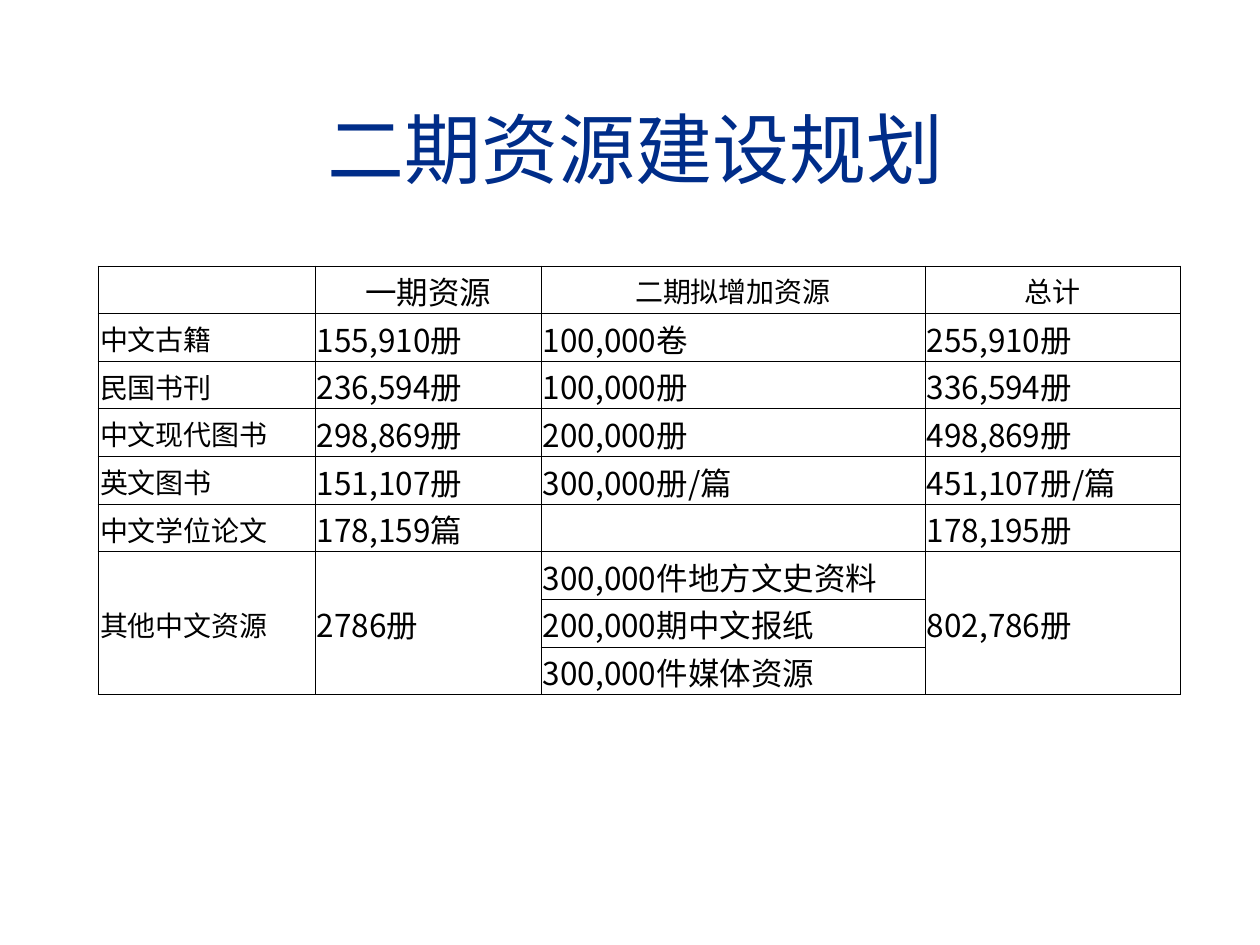
from lxml.etree import SubElement as Sub
from pptx import Presentation
from pptx.dml.color import RGBColor as RGB
from pptx.enum.text import MSO_ANCHOR as Anchor, PP_ALIGN as Align
from pptx.oxml.ns import qn
from pptx.util import Pt

PX = 914400 // 126  # EMU in one px
THEME = dict(ink=RGB(0, 0, 0), head=RGB(0, 0x2D, 0x89), line="000000",
             face="Noto Sans CJK SC", title="Arial",
             big=Pt(44), body=Pt(18), label=Pt(16), rule=Pt(0.5))

COLS = [217, 226, 384, 256]
ROWS = [40] + [45] * 8
DATA = [
    ["", "一期资源", "二期拟增加资源", "总计"],
    ["中文古籍", "155,910册", "100,000卷", "255,910册"],
    ["民国书刊", "236,594册", "100,000册", "336,594册"],
    ["中文现代图书", "298,869册", "200,000册", "498,869册"],
    ["英文图书", "151,107册", "300,000册/篇", "451,107册/篇"],
    ["中文学位论文", "178,159篇", "", "178,195册"],
    ["其他中文资源", "2786册", "300,000件地方文史资料", "802,786册"],
    ["", "", "200,000期中文报纸", ""],
    ["", "", "300,000件媒体资源", ""],
]


def write(frame, text, face, size, color, align):
    para = frame.paragraphs[0]
    para.alignment = align
    font = para.font
    font.name, font.size, font.color.rgb = face, size, color
    if text:
        para.add_run().text = text


def frame_cell(cell):
    props = cell._tc.get_or_add_tcPr()
    for side in ("a:lnL", "a:lnR", "a:lnT", "a:lnB"):
        edge = Sub(props, qn(side), w=str(THEME["rule"]))
        Sub(Sub(edge, qn("a:solidFill")), qn("a:srgbClr"), val=THEME["line"])
    cell.fill.background()


deck = Presentation()
deck.slide_width, deck.slide_height = 1260 * PX, 945 * PX
slide = deck.slides.add_slide(deck.slide_layouts[6])

# Table grid
table = slide.shapes.add_table(
    len(ROWS), len(COLS), 98 * PX, 266 * PX, sum(COLS) * PX, sum(ROWS) * PX).table
table.first_row = table.horz_banding = False
for col, width in zip(table.columns, COLS):
    col.width = width * PX
for row, height in zip(table.rows, ROWS):
    row.height = height * PX

# Cells: headings centred, labels smaller, first-phase counts justified
for r, line in enumerate(DATA):
    for c, text in enumerate(line):
        cell = table.cell(r, c)
        cell.vertical_anchor = Anchor.MIDDLE
        cell.margin_left = cell.margin_right = cell.margin_top = 2 * PX
        cell.margin_bottom = 0
        frame_cell(cell)
        small = c == 0 or (r == 0 and c > 1)
        if r == 0:
            align = Align.CENTER
        else:
            align = Align.JUSTIFY if c == 1 and r < 6 else Align.LEFT
        write(cell.text_frame, text, THEME["face"],
              THEME["label"] if small else THEME["body"], THEME["ink"], align)

# The last group spans three rows, except in the second-phase column
for c in (0, 1, 3):
    table.cell(6, c).merge(table.cell(8, c))

# Title
frame = slide.shapes.add_textbox(69 * PX, 69 * PX, 1134 * PX, 158 * PX).text_frame
frame.word_wrap = True
frame.vertical_anchor = Anchor.MIDDLE
write(frame, "二期资源建设规划", THEME["title"], THEME["big"], THEME["head"], Align.CENTER)

deck.save("out.pptx")
